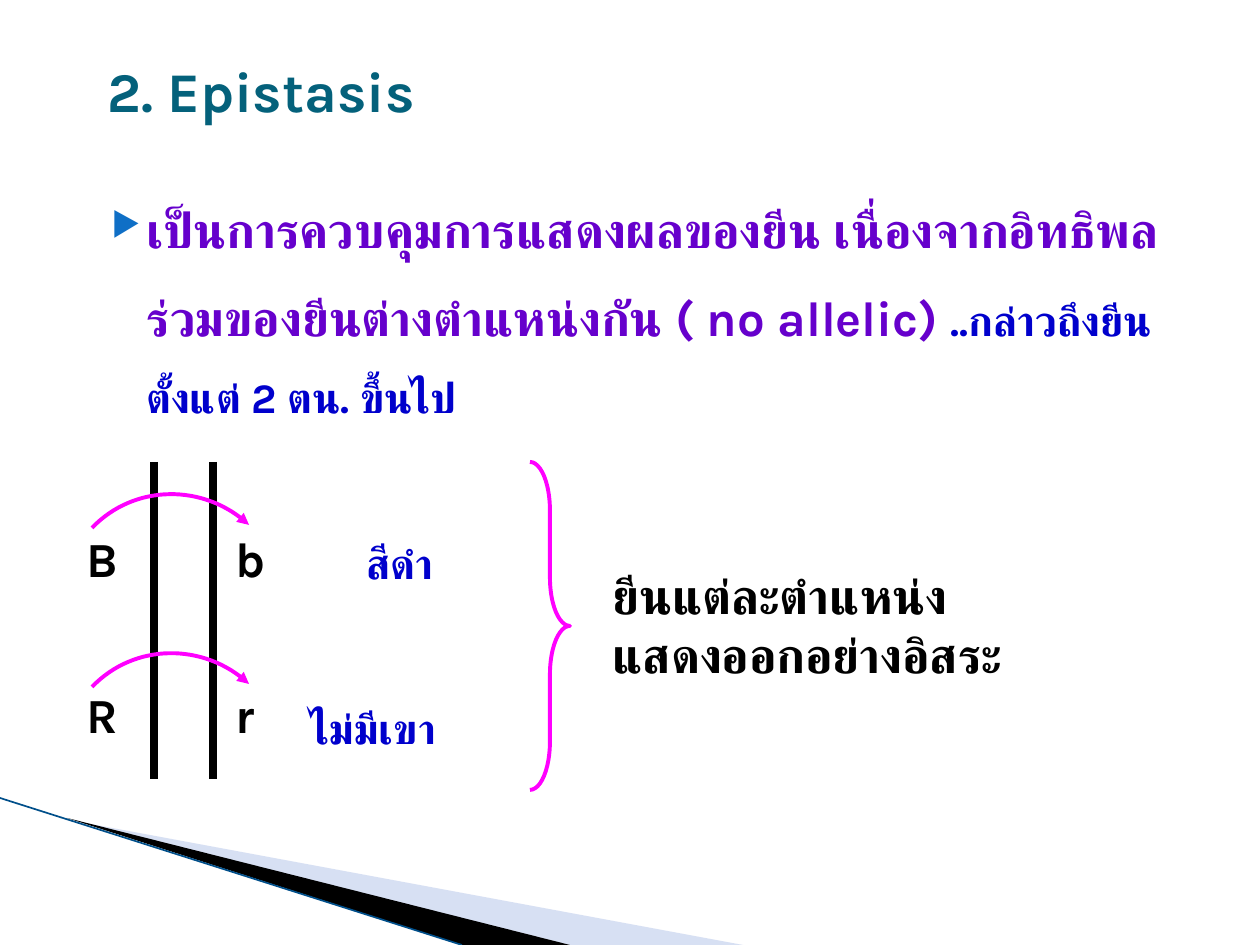
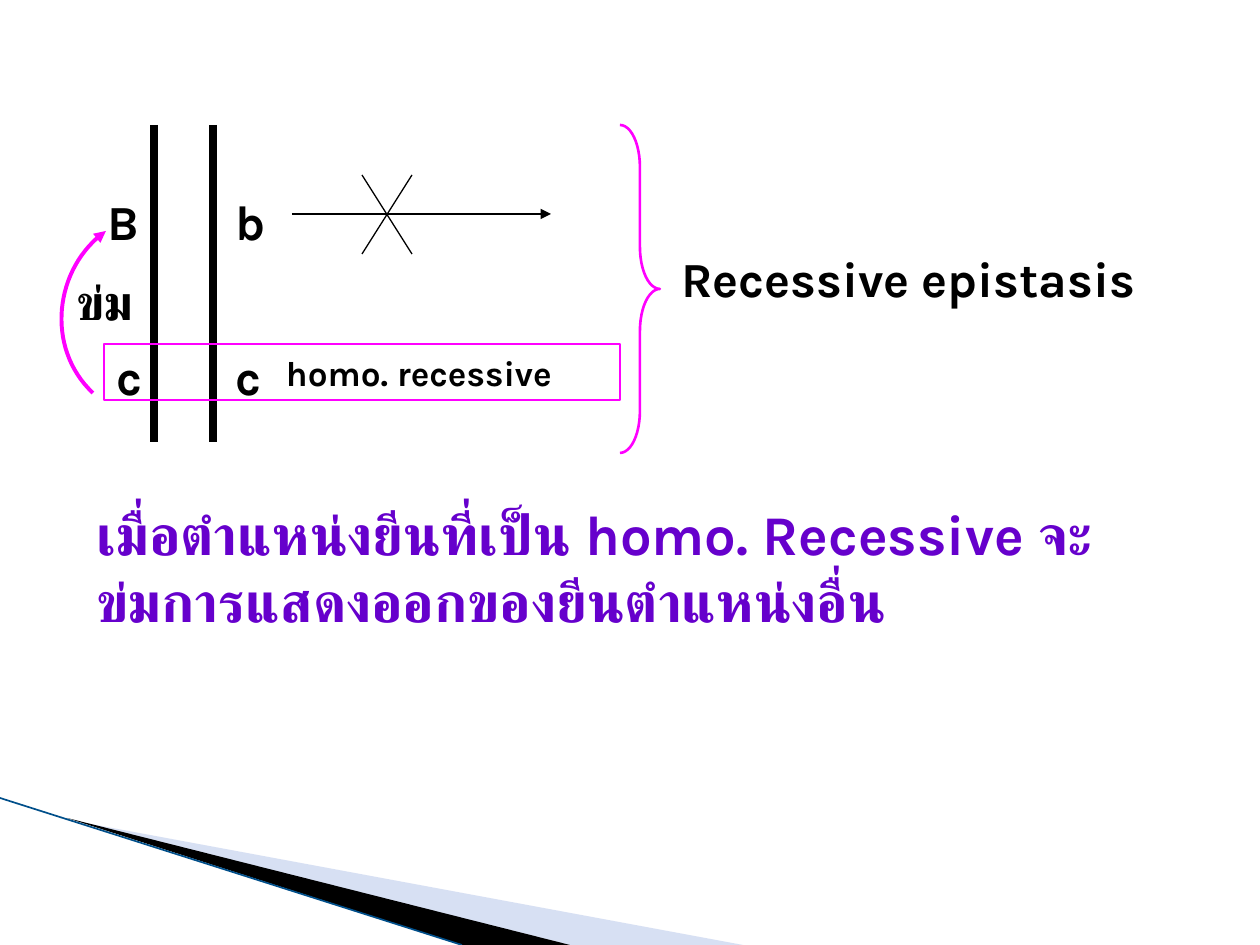
from dataclasses import dataclass

from lxml.etree import SubElement
from pptx import Presentation
from pptx.dml.color import RGBColor
from pptx.enum.shapes import MSO_CONNECTOR, MSO_SHAPE
from pptx.enum.text import MSO_ANCHOR
from pptx.oxml.ns import qn
from pptx.util import Emu, Pt

SCALE = 914400 / 126
WIDTH, HEIGHT = 1260, 945

BLACK = "000000"
MAGENTA = "FF00FF"
PURPLE = "6600CC"
BLUE = "0000CC"
TEAL = "04617B"
BULLET = "0F6FC6"
BAND_LIGHT = "9DB2E1"
BAND_EDGE = "004F8A"

STRAND_XS = (154, 213)
STRAND_HEIGHT = 317
BRACE_HEIGHT = 328
LABEL_SIZE = (59, 63)


@dataclass(frozen=True)
class Run:
    text: str
    size: int = 28
    color: str = BLACK
    font: str = "Karla"


@dataclass(frozen=True)
class Text:
    x: int
    y: int
    w: int
    h: int
    runs: tuple[Run, ...]


@dataclass(frozen=True)
class Line:
    x1: int
    y1: int
    x2: int
    y2: int
    color: str = BLACK
    width: float = 0.75
    arrow: bool = False


@dataclass(frozen=True)
class Brace:
    x: int
    y: int
    w: int
    curve: float
    width: float


Point = tuple[float, float]


def px(value: float) -> Emu:
    return Emu(round(value * SCALE))


def rgb(value: str) -> RGBColor:
    return RGBColor.from_string(value)


def apply(target, values: dict) -> None:
    for name, value in values.items():
        setattr(target, name, value)


def set_line(shape, color: str, width: float) -> None:
    shape.line.color.rgb = rgb(color)
    shape.line.width = Pt(width)


def add_end(shape, tag: str) -> None:
    SubElement(shape.line._get_or_add_ln(), qn(tag), type="triangle")


def write_runs(p, runs: tuple[Run, ...]) -> None:
    for run in runs:
        r = p.add_run()
        r.text = run.text
        apply(r.font, {"size": Pt(run.size), "bold": True, "name": run.font})
        r.font.color.rgb = rgb(run.color)
        SubElement(r._r.get_or_add_rPr(), qn("a:cs"), typeface=run.font)


def add_text(s, text: Text, anchor: MSO_ANCHOR = MSO_ANCHOR.TOP):
    sp = s.shapes.add_textbox(*map(px, (text.x, text.y, text.w, text.h)))
    tf = sp.text_frame
    apply(tf, {"word_wrap": True, "vertical_anchor": anchor})
    write_runs(tf.paragraphs[0], text.runs)
    return sp


def add_bullet_text(s, text: Text) -> None:
    p = add_text(s, text).text_frame.paragraphs[0]
    pPr = p._p.get_or_add_pPr()
    pPr.set("marL", str(px(50)))
    pPr.set("indent", str(px(-35)))
    SubElement(SubElement(pPr, qn("a:buClr")), qn("a:srgbClr"), val=BULLET)
    SubElement(pPr, qn("a:buSzPct"), val="68000")
    SubElement(pPr, qn("a:buChar"), char="▶")
    p.line_spacing = 1.5


def add_line(s, line: Line) -> None:
    ends = map(px, (line.x1, line.y1, line.x2, line.y2))
    sp = s.shapes.add_connector(MSO_CONNECTOR.STRAIGHT, *ends)
    set_line(sp, line.color, line.width)
    SubElement(sp._element.spPr, qn("a:effectLst"))
    if line.arrow:
        add_end(sp, "a:tailEnd")


def add_outline(s, points: list[Point], close: bool):
    start, *rest = [(px(x), px(y)) for x, y in points]
    builder = s.shapes.build_freeform(*start, scale=1.0)
    builder.add_line_segments(rest, close=close)
    sp = builder.convert_to_shape()
    sp.shadow.inherit = False
    return sp


def add_band(s, points: list[Point], color: str, alpha: int) -> None:
    sp = add_outline(s, points, True)
    sp.fill.solid()
    sp.fill.fore_color.rgb = rgb(color)
    sp.line.fill.background()
    fill = sp._element.spPr.find(qn("a:solidFill"))
    SubElement(fill[0], qn("a:alpha"), val=str(alpha * 1000))


def curve_point(controls: tuple[Point, ...], t: float) -> Point:
    u = 1 - t
    weights = (u**3, 3 * u * u * t, 3 * u * t * t, t**3)
    x, y = (sum(w * c[i] for w, c in zip(weights, controls)) for i in (0, 1))
    return x, y


def add_arc(s, controls: tuple[Point, ...]) -> None:
    sp = add_outline(s, [curve_point(controls, i / 32) for i in range(33)], False)
    sp.fill.background()
    set_line(sp, MAGENTA, 2.25)
    add_end(sp, "a:headEnd")


def add_brace(s, brace: Brace) -> None:
    box = map(px, (brace.x, brace.y, brace.w, BRACE_HEIGHT))
    sp = s.shapes.add_shape(MSO_SHAPE.RIGHT_BRACE, *box)
    sp.adjustments[0] = brace.curve
    sp.shadow.inherit = False
    sp.fill.background()
    set_line(sp, MAGENTA, brace.width)


def add_strands(s, top: int) -> None:
    for x in STRAND_XS:
        add_line(s, Line(x, top, x, top + STRAND_HEIGHT, width=4.5))


def add_alleles(s, alleles: tuple[tuple[str, int, int], ...]) -> None:
    for letter, x, y in alleles:
        add_text(s, Text(x, y, *LABEL_SIZE, (Run(letter),)))


def add_base(prs):
    s = prs.slides.add_slide(prs.slide_layouts[6])
    add_band(s, [(69, 820), (743, HEIGHT), (570, HEIGHT)], BAND_LIGHT, 40)
    add_band(s, [(67, 818), (570, HEIGHT), (462, HEIGHT)], BLACK, 100)
    add_line(s, Line(0, 798, 462, HEIGHT, BAND_EDGE, 0.95))
    return s


def add_epistasis(prs) -> None:
    s = add_base(prs)
    title = Text(95, 35, 1071, 110, (Run("2. Epistasis", 32, TEAL),))
    add_text(s, title, MSO_ANCHOR.MIDDLE)
    add_bullet_text(s, Text(84, 164, 1121, 270, (
        Run("เป็นการควบคุมการแสดงผลของยีน เนื่องจากอิทธิพลร่วมของยีน"
            "ต่างตำแหน่งกัน ( no allelic) ", 28, PURPLE),
        Run("..กล่าวถึงยีนตั้งแต่ 2 ตน. ขึ้นไป", 24, BLUE),
    )))
    add_text(s, Text(354, 531, 120, 60, (Run("สีดำ", 24, BLUE),)))
    add_text(s, Text(297, 696, 180, 60, (Run("ไม่มีเขา", 24, BLUE),)))
    add_strands(s, 462)
    add_alleles(s, (("B", 74, 522), ("b", 223, 522), ("R", 74, 678), ("r", 223, 678)))
    for top in (0, 159):
        arc = ((249, 525), (204, 483), (134, 484), (92, 528))
        add_arc(s, tuple((x, y + top) for x, y in arc))
    add_text(s, Text(600, 559, 525, 131, (Run("ยีนแต่ละตำแหน่งแสดงออกอย่างอิสระ"),)))
    add_brace(s, Brace(530, 462, 40, 1.21, 2.25))


def add_recessive_epistasis(prs) -> None:
    s = add_base(prs)
    add_strands(s, 125)
    add_alleles(s, (("B", 95, 185), ("b", 223, 185), ("c", 104, 340), ("c", 223, 340)))
    add_arc(s, ((106, 231), (54, 268), (45, 348), (93, 393)))
    add_text(s, Text(669, 242, 525, 72, (Run("Recessive epistasis"),)))
    add_brace(s, Brace(620, 125, 40, 1.05, 1.5))

    box = s.shapes.add_shape(MSO_SHAPE.RECTANGLE, *map(px, (104, 344, 516, 56)))
    box.shadow.inherit = False
    box.fill.background()
    set_line(box, MAGENTA, 1.5)
    tf = box.text_frame
    apply(tf, {"margin_left": px(182), "vertical_anchor": MSO_ANCHOR.MIDDLE})
    p = tf.paragraphs[0]
    p.alignment = 1
    write_runs(p, (Run("homo. recessive", 20),))

    add_line(s, Line(292, 214, 551, 214, arrow=True))
    for x1, x2 in ((362, 412), (412, 362)):
        add_line(s, Line(x1, 175, x2, 254))
    add_text(s, Text(84, 493, 1050, 248, (
        Run("เมื่อตำแหน่งยีนที่เป็น homo. Recessive จะข่มการแสดงออกของยีนตำแหน่งอื่น",
            32, PURPLE),
    )))
    add_text(s, Text(64, 265, 120, 63, (Run("ข่ม", font="Courier New"),)))


def main() -> None:
    prs = Presentation()
    apply(prs, {"slide_width": px(WIDTH), "slide_height": px(HEIGHT)})
    add_epistasis(prs)
    add_recessive_epistasis(prs)
    prs.save("out.pptx")


if __name__ == "__main__":
    main()
